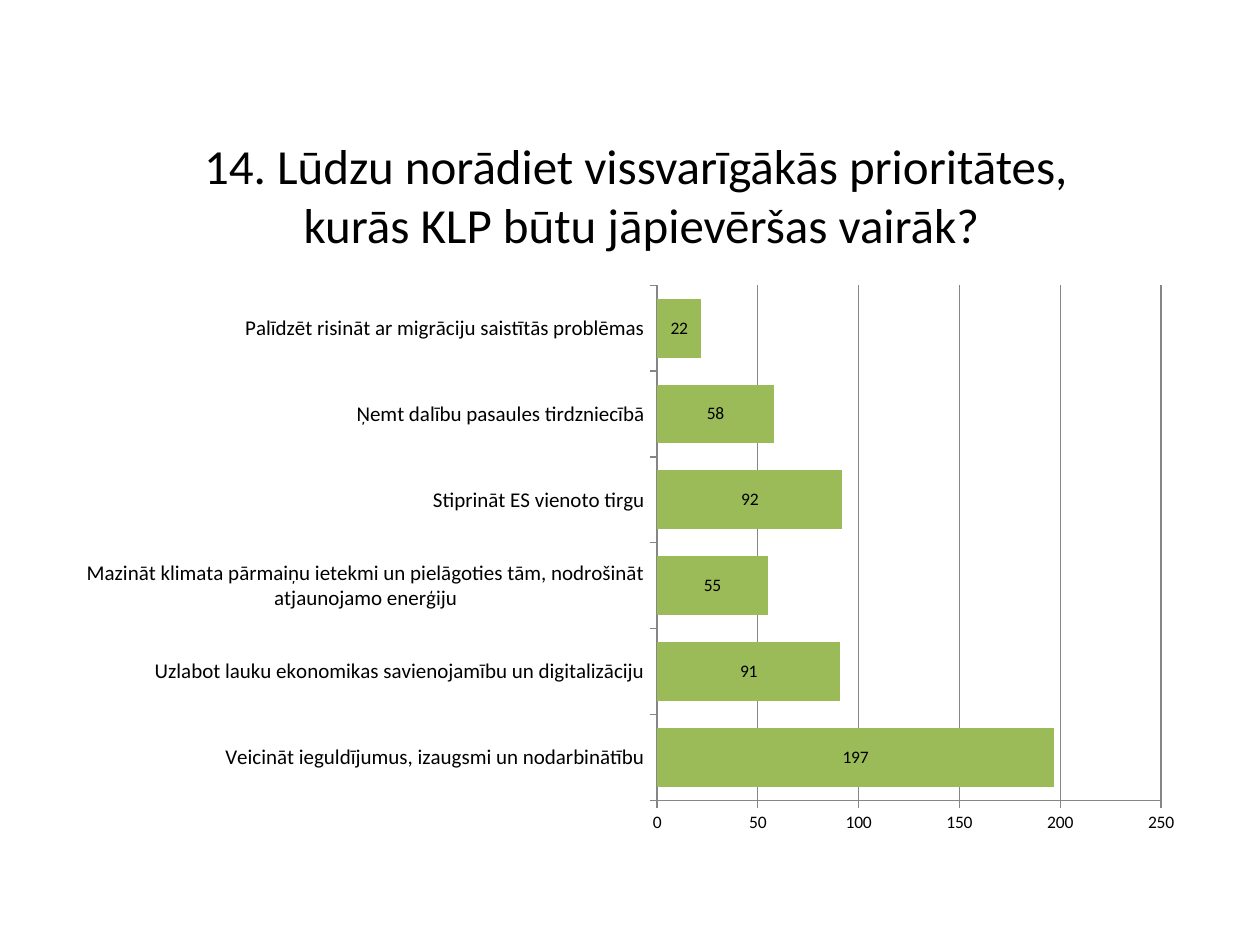
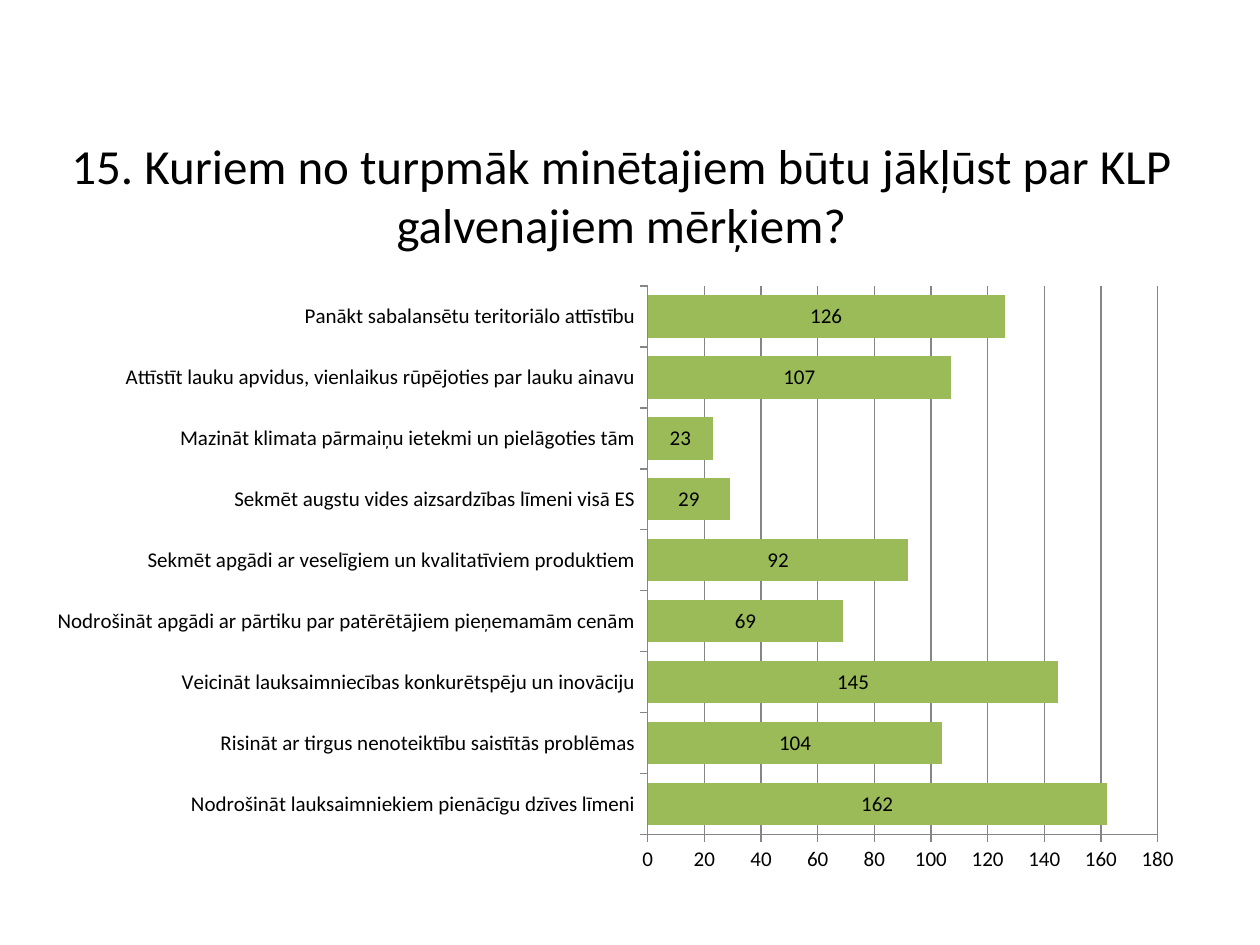
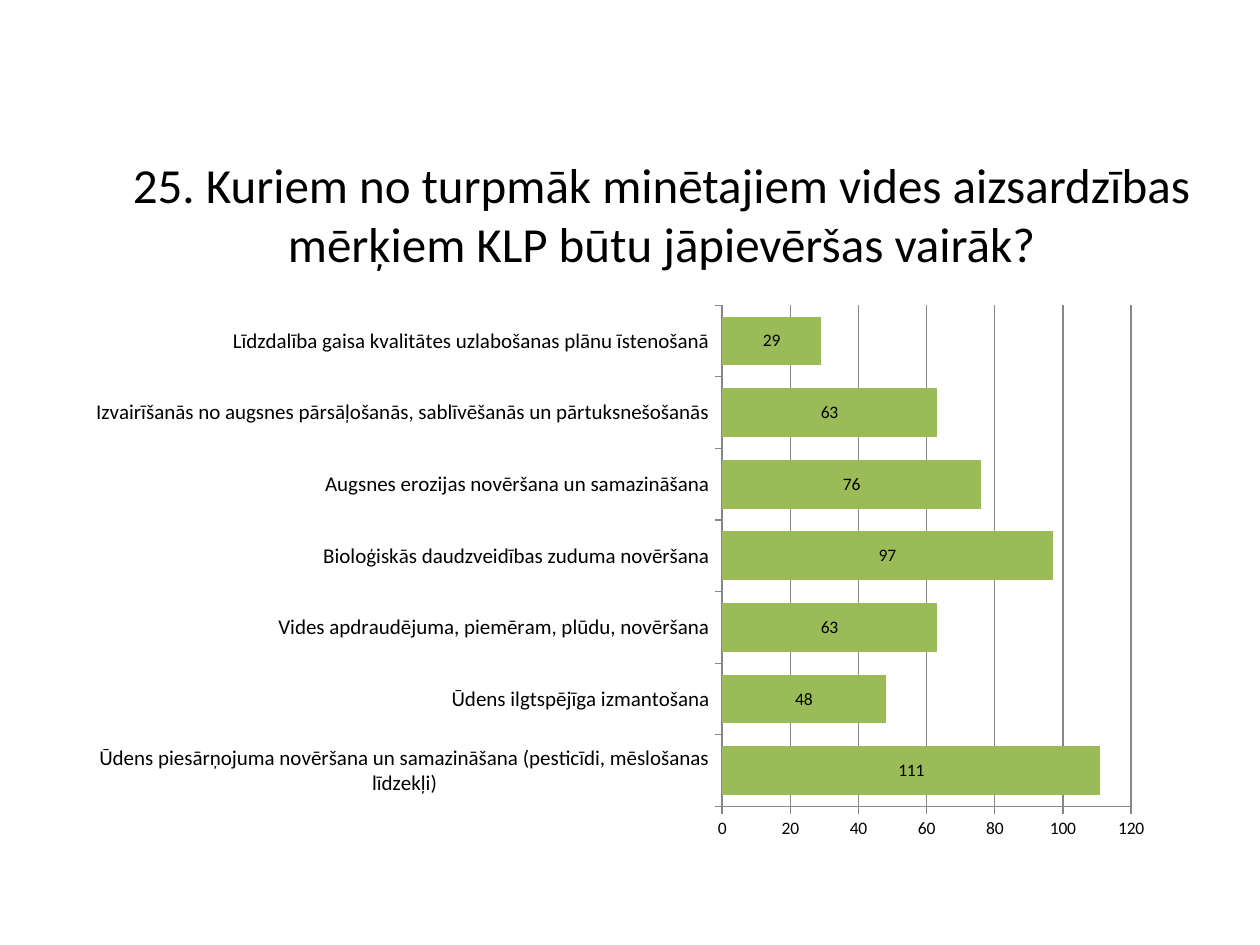
from typing import NamedTuple

from lxml import etree
from pptx import Presentation
from pptx.chart.data import CategoryChartData
from pptx.dml.color import RGBColor
from pptx.enum.chart import XL_CHART_TYPE, XL_LABEL_POSITION, XL_TICK_MARK
from pptx.enum.text import MSO_ANCHOR, PP_ALIGN
from pptx.oxml.ns import qn
from pptx.util import Pt

STACK = XL_CHART_TYPE.BAR_STACKED
MID = XL_LABEL_POSITION.CENTER
OUT = XL_TICK_MARK.OUTSIDE
NONE = XL_TICK_MARK.NONE
CENTER = PP_ALIGN.CENTER
MIDDLE = MSO_ANCHOR.MIDDLE

FACE = "Calibri"
INK = "000000"
GREEN = "9BBB59"
GRAY = "868686"
TITLE_WIDE, TITLE_HIGH, TITLE_SIZE = 648, 90, 28
LABEL_SIZE = 12


class Box(NamedTuple):
    left: float
    top: float
    wide: float
    high: float


class Poll(NamedTuple):
    title: tuple[str, ...]
    left: float
    top: float
    frame: Box
    plot: Box
    size: int
    gap: int
    limit: int
    step: int
    bars: dict[str, int]


POLLS = [
    Poll(
        ("14. Lūdzu norādiet vissvarīgākās prioritātes, ",
         "kurās KLP būtu jāpievēršas vairāk?"),
        42.5, 66, Box(36.7, 157, 647.3, 325.4), Box(375.5, 163, 288, 294.3),
        10, 46, 250, 50,
        {
            "Veicināt ieguldījumus, izaugsmi un nodarbinātību": 197,
            "Uzlabot lauku ekonomikas savienojamību un digitalizāciju": 91,
            "Mazināt klimata pārmaiņu ietekmi un pielāgoties tām, "
            "nodrošināt atjaunojamo enerģiju": 55,
            "Stiprināt ES vienoto tirgu": 92,
            "Ņemt dalību pasaules tirdzniecībā": 58,
            "Palīdzēt risināt ar migrāciju saistītās problēmas": 22,
        },
    ),
    Poll(
        ("15. Kuriem no turpmāk minētajiem būtu jākļūst par KLP "
         "galvenajiem mērķiem?",),
        31, 66, Box(20.2, 157, 663.8, 348.5), Box(370.2, 163.5, 291.3, 313.4),
        12, 44, 180, 20,
        {
            "Nodrošināt lauksaimniekiem pienācīgu dzīves līmeni": 162,
            "Risināt ar tirgus nenoteiktību saistītās problēmas": 104,
            "Veicināt lauksaimniecības konkurētspēju un inovāciju": 145,
            "Nodrošināt apgādi ar pārtiku par patērētājiem pieņemamām cenām": 69,
            "Sekmēt apgādi ar veselīgiem un kvalitatīviem produktiem": 92,
            "Sekmēt augstu vides aizsardzības līmeni visā ES": 29,
            "Mazināt klimata pārmaiņu ietekmi un pielāgoties tām": 23,
            "Attīstīt lauku apvidus, vienlaikus rūpējoties par lauku ainavu": 107,
            "Panākt sabalansētu teritoriālo attīstību": 126,
        },
    ),
    Poll(
        ("25. Kuriem no turpmāk minētajiem vides aizsardzības mērķiem "
         "KLP būtu jāpievēršas vairāk?",),
        54, 77, Box(42.5, 167.8, 623.5, 317.5), Box(412.7, 174.4, 233.7, 286.5),
        10, 47, 120, 20,
        {
            "Ūdens piesārņojuma novēršana un samazināšana "
            "(pesticīdi, mēslošanas līdzekļi)": 111,
            "Ūdens ilgtspējīga izmantošana": 48,
            "Vides apdraudējuma, piemēram, plūdu, novēršana": 63,
            "Bioloģiskās daudzveidības zuduma novēršana": 97,
            "Augsnes erozijas novēršana un samazināšana": 76,
            "Izvairīšanās no augsnes pārsāļošanās, sablīvēšanās un "
            "pārtuksnešošanās": 63,
            "Līdzdalība gaisa kvalitātes uzlabošanas plānu īstenošanā": 29,
        },
    ),
]


def paint(color, code: str) -> None:
    color.rgb = RGBColor.from_string(code)


def style(font, size: float) -> None:
    font.name = FACE
    font.size = Pt(size)
    font.bold = False
    paint(font.color, INK)


def rule(line) -> None:
    line.width = Pt(0.75)
    paint(line.color, GRAY)


def add_title(slide, poll: Poll) -> None:
    box = slide.shapes.add_textbox(
        Pt(poll.left), Pt(poll.top), Pt(TITLE_WIDE), Pt(TITLE_HIGH))
    text = box.text_frame
    text.word_wrap = True
    text.vertical_anchor = MIDDLE
    para = text.paragraphs[0]
    para.alignment = CENTER
    for spot, words in enumerate(poll.title):
        if spot:
            para.add_line_break()
        run = para.add_run()
        run.text = words
        style(run.font, TITLE_SIZE)


def place_plot(chart, frame: Box, plot: Box) -> None:
    area = chart.element.find(".//" + qn("c:plotArea"))
    for old in area.findall(qn("c:layout")):
        area.remove(old)
    root = etree.Element(qn("c:layout"))
    area.insert(0, root)
    part = etree.SubElement(root, qn("c:manualLayout"))
    items = {
        "layoutTarget": "inner",
        "xMode": "edge",
        "yMode": "edge",
        "x": (plot.left - frame.left) / frame.wide,
        "y": (plot.top - frame.top) / frame.high,
        "w": plot.wide / frame.wide,
        "h": plot.high / frame.high,
    }
    for name, value in items.items():
        etree.SubElement(part, qn("c:" + name)).set("val", str(value))


def add_bars(slide, poll: Poll) -> None:
    data = CategoryChartData()
    data.categories = list(poll.bars)
    data.add_series("Series 1", list(poll.bars.values()))
    chart = slide.shapes.add_chart(STACK, *map(Pt, poll.frame), data).chart
    chart.has_title = False
    chart.has_legend = False
    style(chart.font, poll.size)
    place_plot(chart, poll.frame, poll.plot)

    plot = chart.plots[0]
    plot.gap_width = poll.gap
    plot.overlap = 100
    plot.vary_by_categories = False
    fill = plot.series[0].format.fill
    fill.solid()
    paint(fill.fore_color, GREEN)
    plot.has_data_labels = True
    labels = plot.data_labels
    labels.show_value = True
    labels.position = MID
    style(labels.font, poll.size)

    sizes = (LABEL_SIZE, poll.size)
    for axis, size in zip((chart.category_axis, chart.value_axis), sizes):
        axis.major_tick_mark = OUT
        axis.minor_tick_mark = NONE
        rule(axis.format.line)
        style(axis.tick_labels.font, size)
    scale = chart.value_axis
    scale.minimum_scale = 0
    scale.maximum_scale = poll.limit
    scale.major_unit = poll.step
    scale.has_major_gridlines = True
    rule(scale.major_gridlines.format.line)


def main() -> None:
    deck = Presentation()
    deck.slide_width = Pt(720)
    deck.slide_height = Pt(540)
    for poll in POLLS:
        slide = deck.slides.add_slide(deck.slide_layouts[6])
        add_title(slide, poll)
        add_bars(slide, poll)
    deck.save("out.pptx")


if __name__ == "__main__":
    main()
